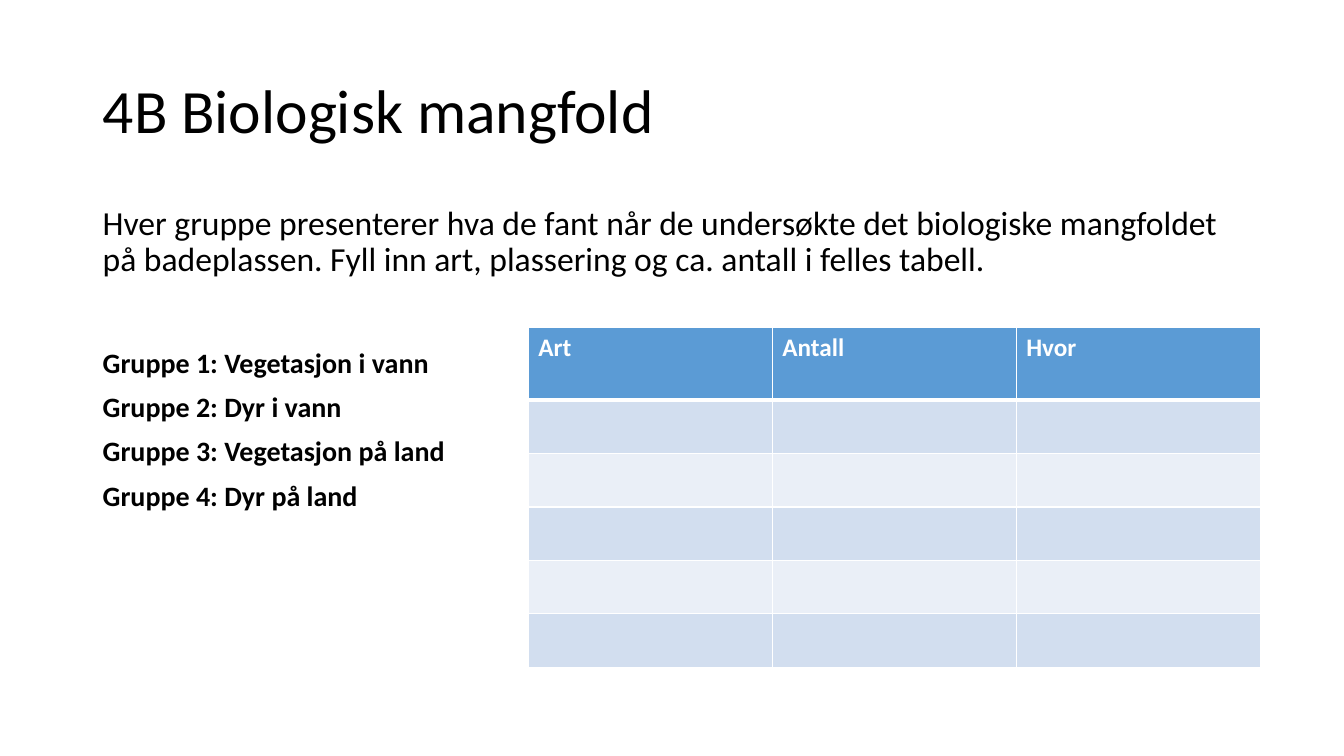
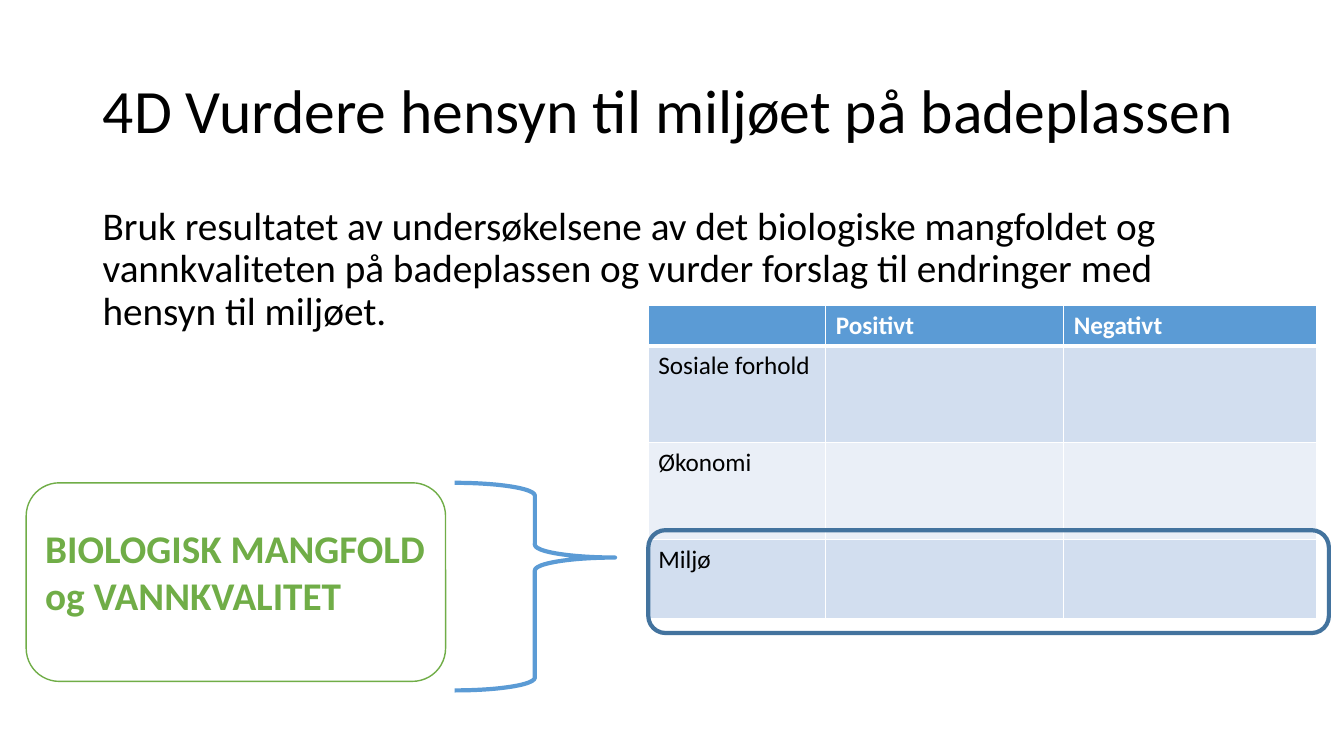
from dataclasses import dataclass

from lxml.etree import SubElement
from pptx import Presentation
from pptx.dml.color import RGBColor
from pptx.enum.shapes import MSO_SHAPE
from pptx.enum.text import MSO_ANCHOR, MSO_AUTO_SIZE, PP_ALIGN
from pptx.oxml.ns import qn
from pptx.util import Inches, Pt

FONT = "Calibri"
BLACK = "000000"
WHITE = "FFFFFF"
BLUE = "5B9BD5"
DARK_BLUE = "43739E"
GREEN = "70AD47"
BANDS = ("D2DEEF", "EAEFF7")
TITLE_ONLY = 5


@dataclass(frozen=True)
class Box:
    left: float
    top: float
    width: float
    height: float

    def lengths(self) -> tuple:
        return tuple(Inches(v) for v in (self.left, self.top, self.width, self.height))


@dataclass(frozen=True)
class Para:
    text: str
    size: int
    bold: bool = False
    color: str = BLACK
    before: int = 0
    spacing: float = 0.9


@dataclass(frozen=True)
class Outline:
    kind: MSO_SHAPE
    box: Box
    color: str
    weight: int
    adjustments: tuple = ()


TITLE_BOX = Box(0.92, 0.4, 11.5, 1.45)
BODY_BOX = Box(0.92, 2, 11.5, 4.76)


def rgb(color: str) -> RGBColor:
    return RGBColor.from_string(color)


def format_paragraph(p, size: int, color: str = BLACK, bold: bool = False) -> None:
    p.font.name = FONT
    p.font.size = Pt(size)
    p.font.bold = bold
    p.font.color.rgb = rgb(color)


def add_titled_slide(prs, title: str):
    s = prs.slides.add_slide(prs.slide_layouts[TITLE_ONLY])
    sp = s.shapes.title
    sp.left, sp.top, sp.width, sp.height = TITLE_BOX.lengths()
    tf = sp.text_frame
    tf.text = title
    tf.word_wrap = True
    tf.auto_size = MSO_AUTO_SIZE.NONE
    tf.vertical_anchor = MSO_ANCHOR.MIDDLE
    p = tf.paragraphs[0]
    p.alignment = PP_ALIGN.LEFT
    p.line_spacing = 0.9
    format_paragraph(p, 44)
    return s


def add_text(s, box: Box, paras: list[Para]) -> None:
    tf = s.shapes.add_textbox(*box.lengths()).text_frame
    tf.word_wrap = True
    for i, para in enumerate(paras):
        p = tf.add_paragraph() if i else tf.paragraphs[0]
        p.text = para.text
        p.line_spacing = para.spacing
        p.space_before = Pt(para.before)
        format_paragraph(p, para.size, para.color, para.bold)


def set_borders(cell, header: bool) -> None:
    """Draw white cell borders, with a heavy rule below the header."""
    tc_pr = cell._tc.get_or_add_tcPr()
    for side in ("L", "R", "T", "B"):
        weight = 3 if header and side == "B" else 1
        ln = SubElement(tc_pr, qn(f"a:ln{side}"), w=str(Pt(weight)))
        fill = SubElement(ln, qn("a:solidFill"))
        SubElement(fill, qn("a:srgbClr"), val=WHITE)


def add_table(s, left: float, top: float, widths: list[float],
              heights: list[float], texts: list[list[str]]) -> None:
    """Draw a banded table; rows beyond the given texts stay empty."""
    box = Box(left, top, sum(widths), sum(heights))
    table = s.shapes.add_table(len(heights), len(widths), *box.lengths()).table
    for column, width in zip(table.columns, widths):
        column.width = Inches(width)
    for r, height in enumerate(heights):
        table.rows[r].height = Inches(height)
        header = r == 0
        row_texts = texts[r] if r < len(texts) else []
        for c, cell in enumerate(table.rows[r].cells):
            set_borders(cell, header)
            cell.fill.solid()
            cell.fill.fore_color.rgb = rgb(BLUE if header else BANDS[(r - 1) % 2])
            if c < len(row_texts):
                cell.text = row_texts[c]
            format_paragraph(cell.text_frame.paragraphs[0], 18,
                             WHITE if header else BLACK, header)


def add_outline(s, outline: Outline) -> None:
    sp = s.shapes.add_shape(outline.kind, *outline.box.lengths())
    sp.shadow.inherit = False
    sp.fill.background()
    sp.line.color.rgb = rgb(outline.color)
    sp.line.width = Pt(outline.weight)
    for i, value in enumerate(outline.adjustments):
        sp.adjustments[i] = value


def build_diversity(prs) -> None:
    s = add_titled_slide(prs, "4B Biologisk mangfold")
    groups = ["Vegetasjon i vann", "Dyr i vann", "Vegetasjon på land", "Dyr på land"]
    intro = Para("Hver gruppe presenterer hva de fant når de undersøkte det biologiske "
                 "mangfoldet på badeplassen. Fyll inn art, plassering og ca. antall i "
                 "felles tabell.", 24)
    add_text(s, BODY_BOX, [intro] + [
        Para(f"Gruppe {n}: {topic}", 20, bold=True, before=50 if n == 1 else 10)
        for n, topic in enumerate(groups, 1)
    ])
    add_table(s, 5.24, 3.25, [2.42] * 3, [0.72] + [0.53] * 5,
              [["Art", "Antall", "Hvor"]])


def build_assessment(prs) -> None:
    s = add_titled_slide(prs, "4D Vurdere hensyn til miljøet på badeplassen")
    add_text(s, BODY_BOX, [
        Para("Bruk resultatet av undersøkelsene av det biologiske mangfoldet og "
             "vannkvaliteten på badeplassen og vurder forslag til endringer med "
             "hensyn til miljøet.", 28)
    ])
    add_table(s, 6.43, 3.03, [1.76, 2.36, 2.51], [0.4, 0.96, 0.96, 0.79],
              [["", "Positivt", "Negativt"], ["Sosiale forhold"], ["Økonomi"], ["Miljø"]])
    for outline in (
        Outline(MSO_SHAPE.RIGHT_BRACE, Box(4.51, 4.79, 1.59, 2.06), BLUE, 3, (0.08, 0.36)),
        Outline(MSO_SHAPE.ROUNDED_RECTANGLE, Box(6.43, 5.26, 6.75, 1.02), DARK_BLUE, 3),
        Outline(MSO_SHAPE.ROUNDED_RECTANGLE, Box(0.26, 4.79, 4.16, 1.97), GREEN, 1),
    ):
        add_outline(s, outline)
    add_text(s, Box(0.35, 5.15, 4.03, 1.35), [
        Para("BIOLOGISK MANGFOLD og VANNKVALITET", 28, bold=True, color=GREEN, spacing=1.0)
    ])


def main() -> None:
    prs = Presentation()
    prs.slide_width = Inches(13.33)
    prs.slide_height = Inches(7.5)
    build_diversity(prs)
    build_assessment(prs)
    prs.save("out.pptx")


if __name__ == "__main__":
    main()
